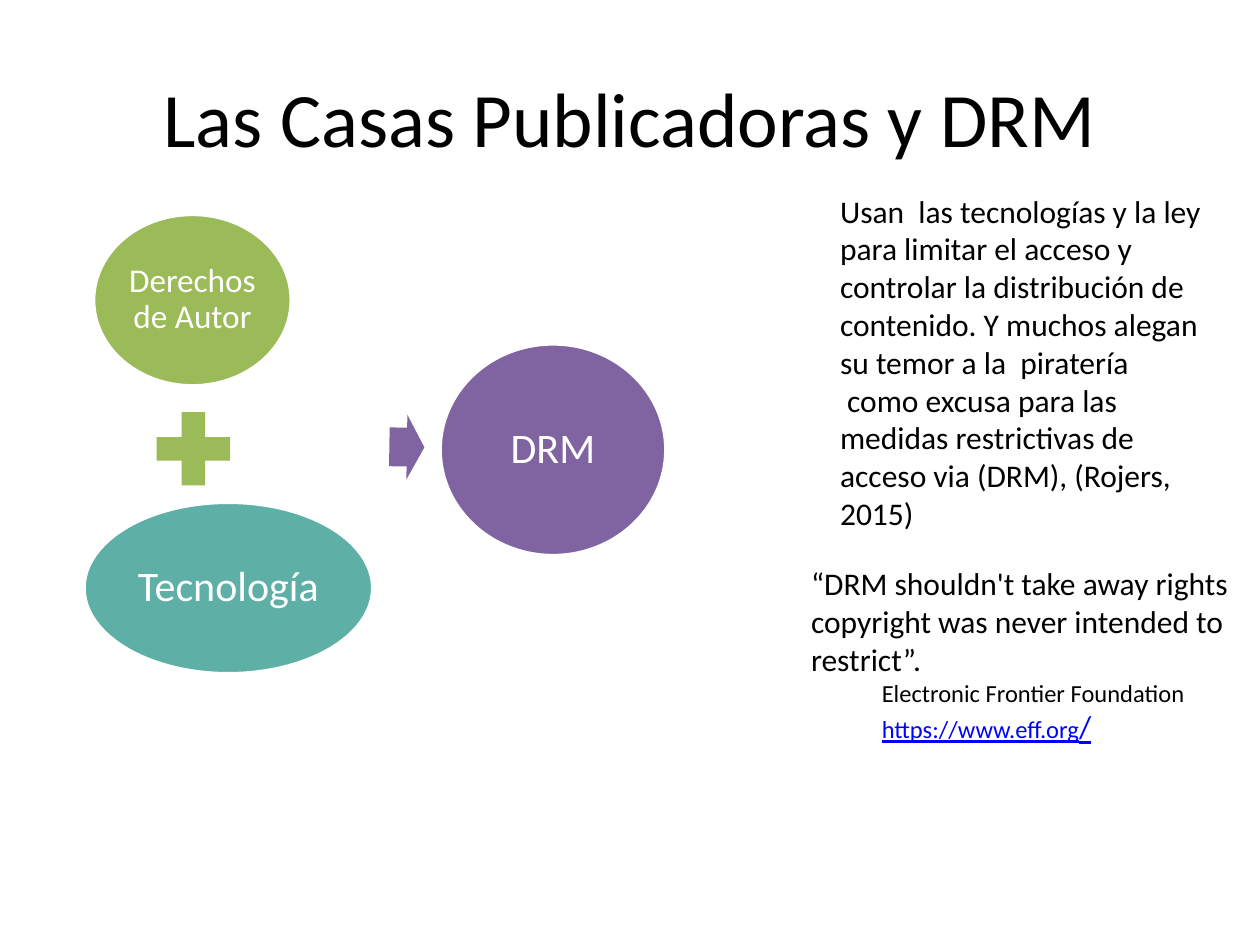
"""Build the slide on publishing houses and DRM."""
from dataclasses import dataclass
from typing import NamedTuple

from pptx import Presentation
from pptx.dml.color import RGBColor
from pptx.enum.shapes import MSO_SHAPE
from pptx.enum.text import MSO_ANCHOR, PP_ALIGN
from pptx.util import Pt

ELLIPSE = MSO_SHAPE.OVAL
PLUS = MSO_SHAPE.MATH_PLUS
ARROW = MSO_SHAPE.RIGHT_ARROW
MIDDLE = MSO_ANCHOR.MIDDLE
TOP = MSO_ANCHOR.TOP
CENTER = PP_ALIGN.CENTER
LEFT = PP_ALIGN.LEFT


@dataclass(frozen=True)
class Theme:
    font: str = "Calibri"
    black: str = "000000"
    white: str = "FFFFFF"
    green: str = "9BBB59"
    teal: str = "5EAFA6"
    purple: str = "8064A2"
    link: str = "0000FF"
    title: float = 44
    large: float = 24
    medium: float = 19
    body: float = 18
    small: float = 14
    outline: float = 2
    inset: float = 2.4


THEME = Theme()


class Box(NamedTuple):
    left: float
    top: float
    width: float
    height: float


class TextRun(NamedTuple):
    text: str
    size: float = THEME.body
    color: str = THEME.black
    underline: bool = False


class Figure(NamedTuple):
    kind: MSO_SHAPE
    box: Box
    color: str
    label: str = ""
    size: float = THEME.large
    rotation: float = 0
    adjustments: tuple[float, ...] = ()


class Passage(NamedTuple):
    box: Box
    paragraphs: list[list[TextRun]]
    alignment: PP_ALIGN = LEFT
    anchor: MSO_ANCHOR = TOP


FIGURES = [
    Figure(ELLIPSE, Box(53.5, 122.5, 113, 98), THEME.green, "Derechos de Autor", THEME.medium),
    Figure(PLUS, Box(82, 228, 57, 57), THEME.green),
    Figure(ELLIPSE, Box(48, 287, 165, 98), THEME.teal, "Tecnología"),
    Figure(ARROW, Box(222.5, 237, 20, 37), THEME.purple, rotation=0.9, adjustments=(0.6, 0.5)),
    Figure(ELLIPSE, Box(251.5, 196.5, 129, 121), THEME.purple, "DRM"),
]

PASSAGES = [
    Passage(Box(36, 21.6, 648, 90),
            [[TextRun("Las Casas Publicadoras y DRM", THEME.title)]], CENTER, MIDDLE),
    Passage(Box(473, 106, 221, 204), [
        [TextRun("Usan  las tecnologías y la ley para limitar el acceso y controlar la "
                 "distribución de contenido. Y muchos alegan su temor a la  piratería")],
        [TextRun(" como excusa para las medidas restrictivas de acceso via (DRM), "
                 "(Rojers, 2015)")],
    ]),
    Passage(Box(496.8, 383.8, 221, 46), [[
        TextRun("Electronic Frontier Foundation ", THEME.small),
        TextRun("https://www.eff.org", THEME.small, THEME.link, True),
        TextRun("/", THEME.body, THEME.link, True),
    ]]),
    Passage(Box(456.4, 319, 255, 73), [
        [TextRun("“DRM shouldn't take away rights copyright was never intended to restrict”.")],
    ]),
]


def add_run(paragraph, text_run: TextRun) -> None:
    run = paragraph.add_run()
    run.text = text_run.text
    run.font.name = THEME.font
    run.font.size = Pt(text_run.size)
    run.font.color.rgb = RGBColor.from_string(text_run.color)
    if text_run.underline:
        run.font.underline = True


def add_figure(slide, figure: Figure) -> None:
    shape = slide.shapes.add_shape(figure.kind, *map(Pt, figure.box))
    shape.shadow.inherit = False
    shape.rotation = figure.rotation
    shape.fill.solid()
    shape.fill.fore_color.rgb = RGBColor.from_string(figure.color)
    for index, value in enumerate(figure.adjustments):
        shape.adjustments[index] = value
    if not figure.label:
        shape.line.fill.background()
        return
    shape.line.color.rgb = RGBColor.from_string(THEME.white)
    shape.line.width = Pt(THEME.outline)
    frame = shape.text_frame
    frame.word_wrap = True
    frame.vertical_anchor = MIDDLE
    frame.margin_left = frame.margin_right = Pt(THEME.inset)
    frame.margin_top = frame.margin_bottom = Pt(THEME.inset)
    paragraph = frame.paragraphs[0]
    paragraph.alignment = CENTER
    paragraph.line_spacing = 0.9
    add_run(paragraph, TextRun(figure.label, figure.size, THEME.white))


def add_passage(slide, passage: Passage) -> None:
    frame = slide.shapes.add_textbox(*map(Pt, passage.box)).text_frame
    frame.word_wrap = True
    frame.vertical_anchor = passage.anchor
    for index, text_runs in enumerate(passage.paragraphs):
        paragraph = frame.add_paragraph() if index else frame.paragraphs[0]
        paragraph.alignment = passage.alignment
        for text_run in text_runs:
            add_run(paragraph, text_run)


def main() -> None:
    presentation = Presentation()
    presentation.slide_width = Pt(720)
    presentation.slide_height = Pt(540)
    slide = presentation.slides.add_slide(presentation.slide_layouts[6])
    for figure in FIGURES:
        add_figure(slide, figure)
    for passage in PASSAGES:
        add_passage(slide, passage)
    presentation.save("out.pptx")


if __name__ == "__main__":
    main()
